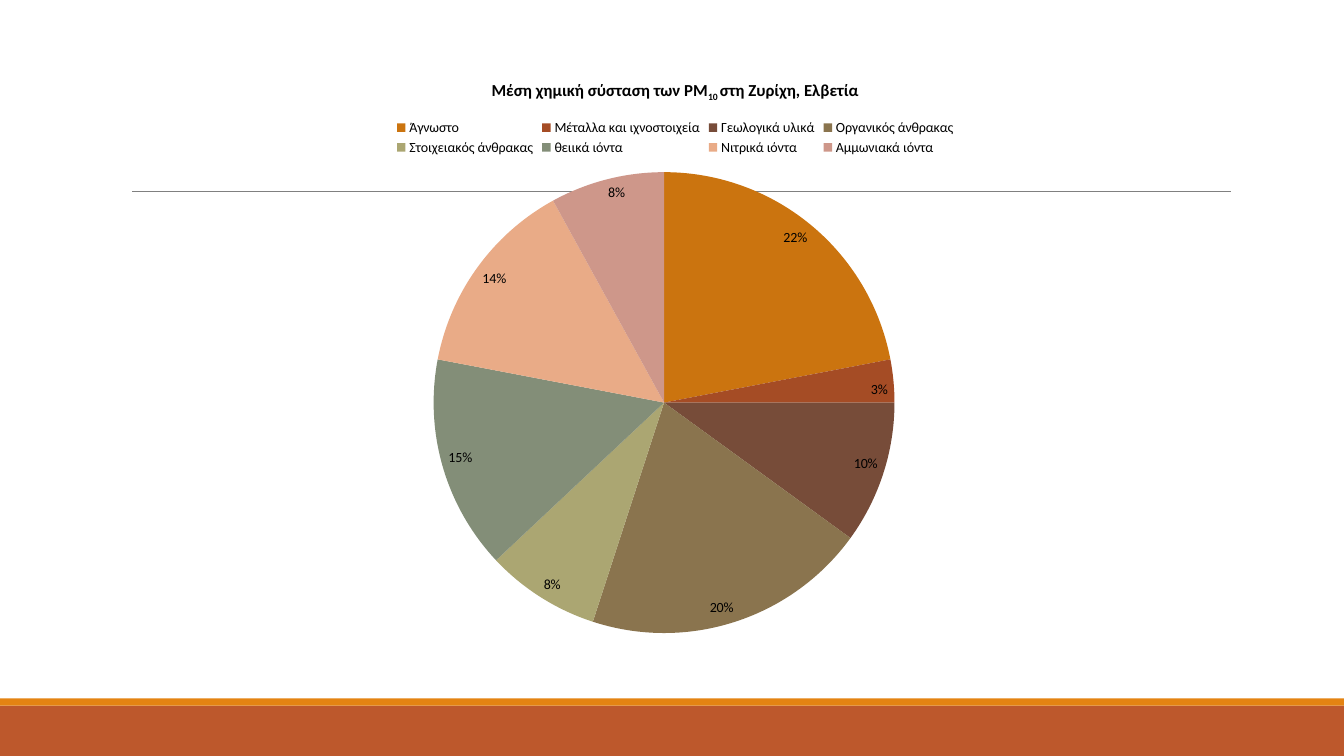
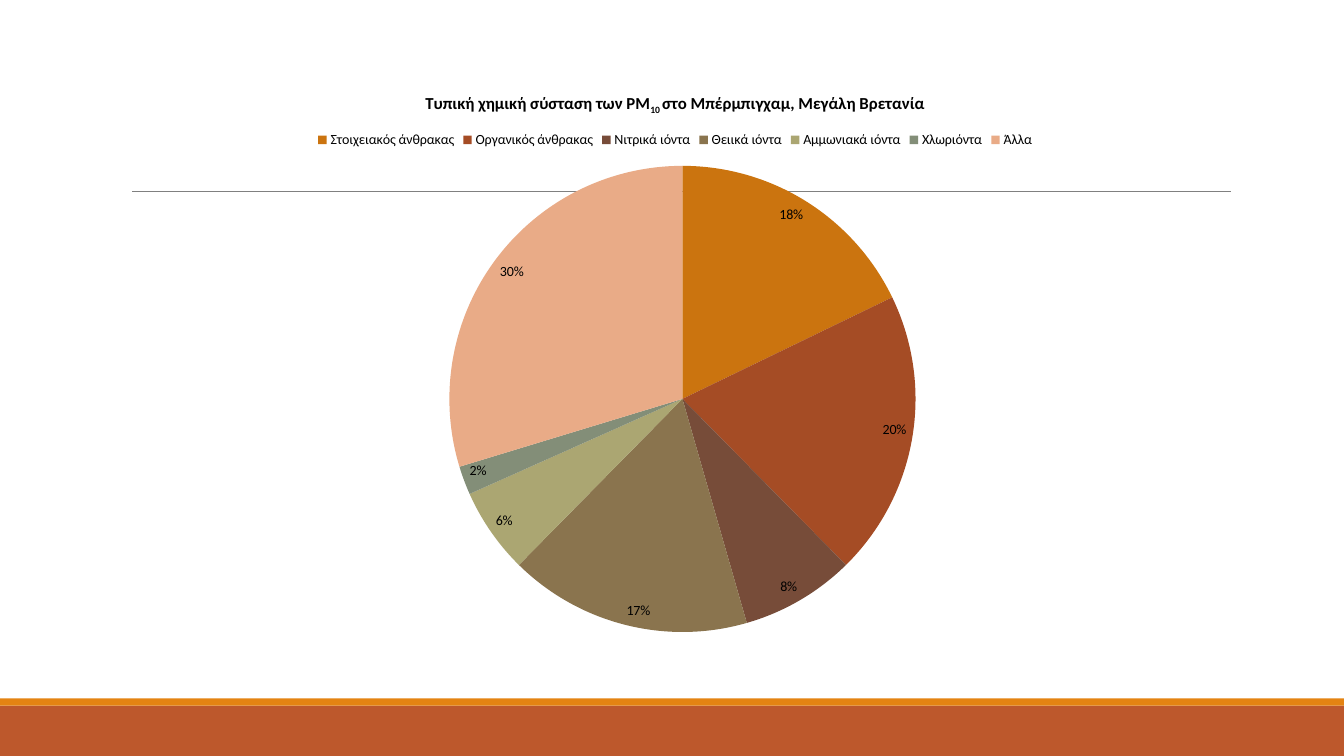
import dataclasses
from typing import Any

import lxml.etree
import pptx
import pptx.chart.chart
import pptx.chart.data
import pptx.dml.color
import pptx.enum.chart
import pptx.enum.shapes
import pptx.oxml.ns
import pptx.slide
import pptx.util

EMU_PER_PX = 9525
SLIDE_WIDTH, SLIDE_HEIGHT = 1280, 720


# Theme: colours and type sizes
@dataclasses.dataclass(frozen=True)
class Theme:
    font: str = "Calibri"
    text: str = "000000"
    rule: str = "808080"
    band: str = "BD582C"
    stripe: str = "E48312"
    slices: tuple[str, ...] = ("CB740F", "A54C25", "774C39", "8A744E",
                               "ABA672", "838E78", "E9AB87", "CE978A")
    title_size: int = 12
    label_size: int = 10
    rule_width: float = 0.5


THEME = Theme()


@dataclasses.dataclass(frozen=True)
class Box:
    left: int
    top: int
    width: int
    height: int

    def emu(self) -> tuple[int, ...]:
        return tuple(px(length) for length in dataclasses.astuple(self))


@dataclasses.dataclass(frozen=True)
class Band:
    box: Box
    color: str


@dataclasses.dataclass(frozen=True)
class Composition:
    """Chemical composition of PM10 in one city."""
    place: tuple[str, str, str]  # before, in and after the subscript
    frame: Box
    pie: Box
    shares: dict[str, int]


# Content
BANDS = (
    Band(Box(0, 672, SLIDE_WIDTH, 48), THEME.band),
    Band(Box(0, 665, SLIDE_WIDTH, 7), THEME.stripe),
)
RULE = Box(126, 182, 1046, 0)

COMPOSITIONS = (
    Composition(
        ("Μέση χημική σύσταση των PM", "10 ", "στη Ζυρίχη, Ελβετία"),
        Box(115, 56, 1056, 561), Box(413, 164, 439, 439),
        {"Άγνωστο": 22, "Μέταλλα και ιχνοστοιχεία": 3,
         "Γεωλογικά υλικά": 10, "Οργανικός άνθρακας": 20,
         "Στοιχειακός άνθρακας": 8, "θειικά ιόντα": 15,
         "Νιτρικά ιόντα": 14, "Αμμωνιακά ιόντα": 8}),
    Composition(
        ("Τυπική χημική σύσταση των PM", "10 ",
         "στο Μπέρμπιγχαμ, Μεγάλη Βρετανία"),
        Box(115, 68, 1056, 548), Box(428, 158, 444, 444),
        {"Στοιχειακός άνθρακας": 18, "Οργανικός άνθρακας": 20,
         "Νιτρικά ιόντα": 8, "Θειικά ιόντα": 17, "Αμμωνιακά ιόντα": 6,
         "Χλωριόντα": 2, "Άλλα": 30}),
)


# Helpers
def px(length: int) -> int:
    return length * EMU_PER_PX


def rgb(color: str) -> pptx.dml.color.RGBColor:
    return pptx.dml.color.RGBColor.from_string(color)


def set_format(target: Any, values: dict[str, Any]) -> None:
    for name, value in values.items():
        setattr(target, name, value)


def set_font(font: Any, size: int, bold: bool = False) -> None:
    set_format(font, {"name": THEME.font, "size": pptx.util.Pt(size),
                      "bold": bold})
    font.color.rgb = rgb(THEME.text)


# Shared background, moved to the layout
def furnish_layout(slide: pptx.slide.Slide) -> None:
    layout = slide.slide_layout
    for placeholder in list(layout.placeholders):
        layout.shapes.element.remove(placeholder.element)

    furniture = []
    for band in BANDS:
        strip = slide.shapes.add_shape(
            pptx.enum.shapes.MSO_SHAPE.RECTANGLE, *band.box.emu())
        strip.shadow.inherit = False
        strip.fill.solid()
        strip.fill.fore_color.rgb = rgb(band.color)
        strip.line.fill.background()
        furniture.append(strip)

    left, top, width, height = RULE.emu()
    rule = slide.shapes.add_connector(
        pptx.enum.shapes.MSO_CONNECTOR.STRAIGHT,
        left, top, left + width, top + height)
    rule.line.color.rgb = rgb(THEME.rule)
    rule.line.width = pptx.util.Pt(THEME.rule_width)
    lxml.etree.SubElement(rule.element.spPr,
                          pptx.oxml.ns.qn("a:effectLst"))
    furniture.append(rule)

    for part in furniture:
        layout.shapes.element.append(part.element)


# Pie chart
def write_title(chart: pptx.chart.chart.Chart,
                place: tuple[str, str, str]) -> None:
    chart.has_title = True
    heading = chart.chart_title
    heading.include_in_layout = False
    paragraph = heading.text_frame.paragraphs[0]
    for text, baseline in zip(place, ("0", "-25000", "0")):
        run = paragraph.add_run()
        run.text = text
        set_font(run.font, THEME.title_size, bold=True)
        run.font._element.set("baseline", baseline)


def place_pie(chart: pptx.chart.chart.Chart, pie: Box, frame: Box) -> None:
    plot_area = chart.element.xpath("c:chart/c:plotArea")[0]
    qn = pptx.oxml.ns.qn
    for old_layout in plot_area.findall(qn("c:layout")):
        plot_area.remove(old_layout)
    layout = lxml.etree.Element(qn("c:layout"))
    manual = lxml.etree.SubElement(layout, qn("c:manualLayout"))
    settings = {
        "layoutTarget": "inner", "xMode": "edge", "yMode": "edge",
        "x": (pie.left - frame.left) / frame.width,
        "y": (pie.top - frame.top) / frame.height,
        "w": pie.width / frame.width,
        "h": pie.height / frame.height,
    }
    for tag, value in settings.items():
        lxml.etree.SubElement(manual, qn(f"c:{tag}"), val=str(value))
    plot_area.insert(0, layout)


def add_composition(slide: pptx.slide.Slide,
                    composition: Composition) -> None:
    chart_data = pptx.chart.data.CategoryChartData()
    chart_data.categories = list(composition.shares)
    chart_data.add_series("Series 1", list(composition.shares.values()))
    chart = slide.shapes.add_chart(
        pptx.enum.chart.XL_CHART_TYPE.PIE, *composition.frame.emu(),
        chart_data).chart
    set_font(chart.font, THEME.label_size)
    write_title(chart, composition.place)

    chart.has_legend = True
    set_format(chart.legend, {
        "position": pptx.enum.chart.XL_LEGEND_POSITION.TOP,
        "include_in_layout": False})
    set_font(chart.legend.font, THEME.label_size)

    plot = chart.plots[0]
    set_format(plot, {"vary_by_categories": True, "has_data_labels": True})
    set_format(plot.data_labels, {
        "show_percentage": True, "show_value": False,
        "number_format": "0%", "number_format_is_linked": False,
        "position": pptx.enum.chart.XL_LABEL_POSITION.INSIDE_END})
    set_font(plot.data_labels.font, THEME.label_size)

    for index, color in enumerate(THEME.slices[:len(composition.shares)]):
        share = plot.series[0].points[index].format
        share.fill.solid()
        share.fill.fore_color.rgb = rgb(color)
        share.line.fill.background()
    place_pie(chart, composition.pie, composition.frame)


def main() -> None:
    deck = pptx.Presentation()
    set_format(deck, {"slide_width": px(SLIDE_WIDTH),
                      "slide_height": px(SLIDE_HEIGHT)})
    blank = deck.slide_layouts.get_by_name("Blank")
    slides = [deck.slides.add_slide(blank) for _ in COMPOSITIONS]
    furnish_layout(slides[0])
    for slide, composition in zip(slides, COMPOSITIONS):
        add_composition(slide, composition)
    deck.save("out.pptx")


if __name__ == "__main__":
    main()
